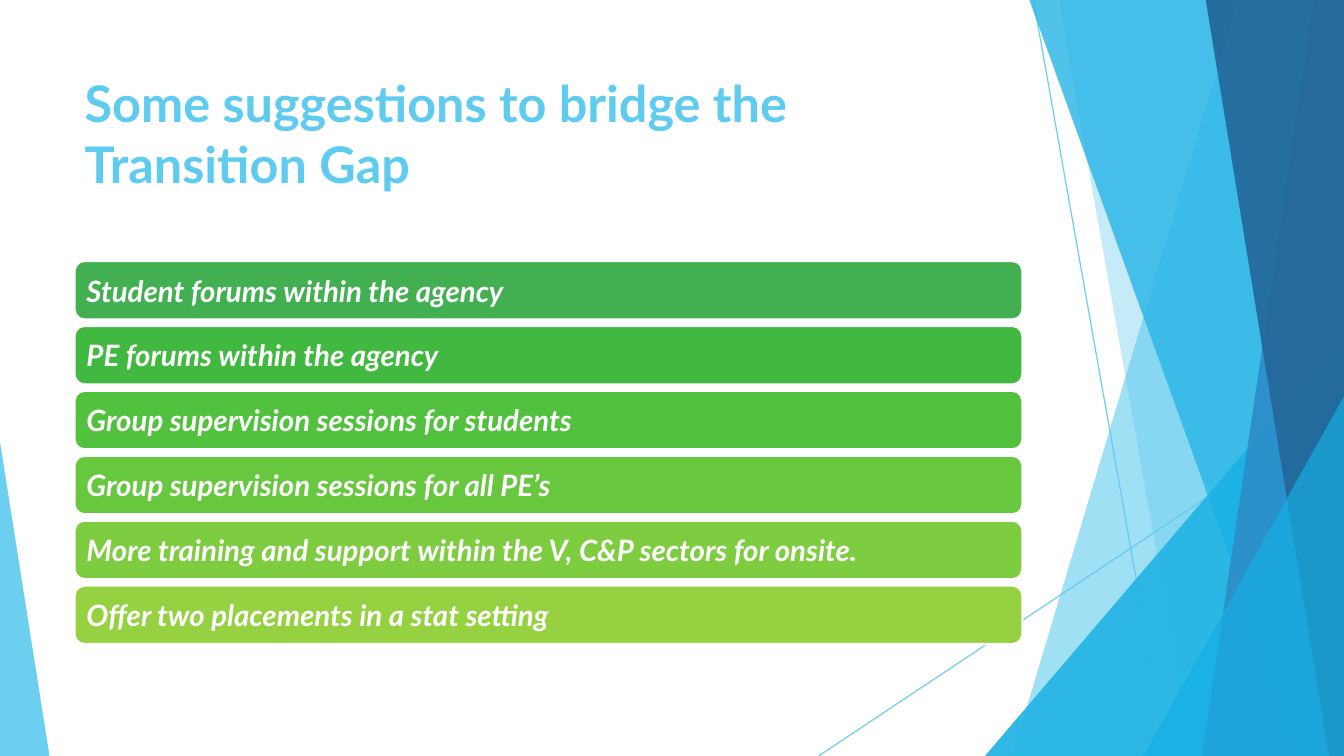
import lxml.etree
import pptx
import pptx.util
import pptx.dml.color
import pptx.enum.shapes
import pptx.enum.text
import pptx.oxml.ns

RGBColor = pptx.dml.color.RGBColor
Inches = pptx.util.Inches
Pt = pptx.util.Pt
MSO_SHAPE = pptx.enum.shapes.MSO_SHAPE
MSO_ANCHOR = pptx.enum.text.MSO_ANCHOR
qn = pptx.oxml.ns.qn

W, H = 13.33, 7.5
LEFT, WIDTH = 0.74, 9.4
FONT = "Lato"
WHITE = RGBColor(0xFF, 0xFF, 0xFF)
SKY = RGBColor(0x5F, 0xCB, 0xEF)
CYAN = RGBColor(0x17, 0xB0, 0xE4)
BLUE = RGBColor(0x2E, 0x83, 0xC3)
NAVY = RGBColor(0x22, 0x62, 0x92)

SUGGESTIONS = [
    ("Student forums within the agency", RGBColor(0x42, 0xB0, 0x51)),
    ("PE forums within the agency", RGBColor(0x41, 0xB9, 0x40)),
    ("Group supervision sessions for students", RGBColor(0x52, 0xC1, 0x3E)),
    ("Group supervision sessions for all PE’s", RGBColor(0x67, 0xC7, 0x3E)),
    ("More training and support within the V, C&P sectors for onsite.",
     RGBColor(0x7E, 0xCC, 0x40)),
    ("Offer two placements in a stat setting", RGBColor(0x96, 0xD1, 0x41)),
]


def set_alpha(sp, percent):
    """Make the colour of a shape's fill or a connector's line see-through."""
    color = next(sp._element.spPr.iter(qn("a:srgbClr")))
    lxml.etree.SubElement(color, qn("a:alpha"), val=str(percent * 1000))


def paint(sp, color, percent):
    sp.shadow.inherit = False
    sp.fill.solid()
    sp.fill.fore_color.rgb = color
    sp.line.fill.background()
    set_alpha(sp, percent)


def add_thin_line(shapes, x1, y1, x2, y2):
    line = shapes.add_connector(pptx.enum.shapes.MSO_CONNECTOR.STRAIGHT,
                                Inches(x1), Inches(y1), Inches(x2), Inches(y2))
    line.line.color.rgb = SKY
    line.line.width = Pt(0.75)
    set_alpha(line, 70)
    lxml.etree.SubElement(line._element.spPr, qn("a:effectLst"))


def add_band(shapes, top_x, bottom_x, color, percent):
    """Full-height band from a slanted left side to the right slide edge."""
    builder = shapes.build_freeform(Inches(top_x), 0, scale=1.0)
    corners = [(W, 0), (W, H), (bottom_x, H)]
    builder.add_line_segments([(Inches(x), Inches(y)) for x, y in corners])
    paint(builder.convert_to_shape(), color, percent)


def add_corner(shapes, left, top, width, apex, color, percent):
    """Right triangle standing on the bottom edge of the slide."""
    sp = shapes.add_shape(MSO_SHAPE.ISOSCELES_TRIANGLE, Inches(left),
                          Inches(top), Inches(width), Inches(H - top))
    sp.adjustments[0] = apex
    paint(sp, color, percent)


def add_facets(shapes):
    add_thin_line(shapes, 10.25, 0, 11.58, H)
    add_thin_line(shapes, W, 4.03, 8.12, H)
    add_band(shapes, 12.28, 10.04, SKY, 36)
    add_band(shapes, 10.5, 11.83, SKY, 20)
    add_corner(shapes, 9.77, 3.33, W - 9.77, 1, CYAN, 66)
    add_band(shapes, 10.21, 12.91, CYAN, 50)
    add_band(shapes, 13.03, 11.92, BLUE, 70)
    add_band(shapes, 11.96, 13.18, NAVY, 80)
    add_corner(shapes, 11.34, 3.93, W - 11.34, 1, CYAN, 66)
    add_corner(shapes, 0, 4.39, 0.49, 0, SKY, 70)


def format_text(tf, size, color, italic=False):
    tf.word_wrap = True
    p = tf.paragraphs[0]
    p.alignment = pptx.enum.text.PP_ALIGN.LEFT
    font = p.runs[0].font
    font.name, font.size = FONT, Pt(size)
    font.bold, font.italic = True, italic
    font.color.rgb = color


def add_title(slide, left, top, width, height):
    title = slide.shapes.title
    title.left, title.top = Inches(left), Inches(top)
    title.width, title.height = Inches(width), Inches(height)
    tf = title.text_frame
    tf.text = "Some suggestions to bridge the Transition Gap"
    tf.auto_size = pptx.enum.text.MSO_AUTO_SIZE.NONE
    tf.vertical_anchor = MSO_ANCHOR.TOP
    format_text(tf, 36, SKY)


def add_suggestions(shapes, left, top, width, height):
    """Stack of equal bars, with a gap of a tenth of the row pitch."""
    bar_share = 0.9
    pitch = height / (len(SUGGESTIONS) - 1 + bar_share)
    for row, (text, color) in enumerate(SUGGESTIONS):
        sp = shapes.add_shape(MSO_SHAPE.ROUNDED_RECTANGLE, Inches(left),
                              Inches(top + row * pitch), Inches(width),
                              Inches(pitch * bar_share))
        sp.shadow.inherit = False
        sp.fill.solid()
        sp.fill.fore_color.rgb = color
        sp.line.color.rgb = WHITE
        sp.line.width = Pt(1.5)
        tf = sp.text_frame
        tf.text = text
        tf.margin_left = tf.margin_right = Inches(0.09)
        tf.margin_top = tf.margin_bottom = Inches(0.05)
        tf.vertical_anchor = MSO_ANCHOR.MIDDLE
        format_text(tf, 21, WHITE, italic=True)


def main():
    prs = pptx.Presentation()
    prs.slide_width, prs.slide_height = Inches(W), Inches(H)
    slide = prs.slides.add_slide(prs.slide_layouts[5])

    # Two layers of facets deepen the see-through colours
    for _ in range(2):
        add_facets(slide.shapes)

    add_title(slide, LEFT, 0.67, WIDTH, 1.44)
    add_suggestions(slide.shapes, LEFT, 2.59, WIDTH, 3.8)
    prs.save("out.pptx")


if __name__ == "__main__":
    main()
